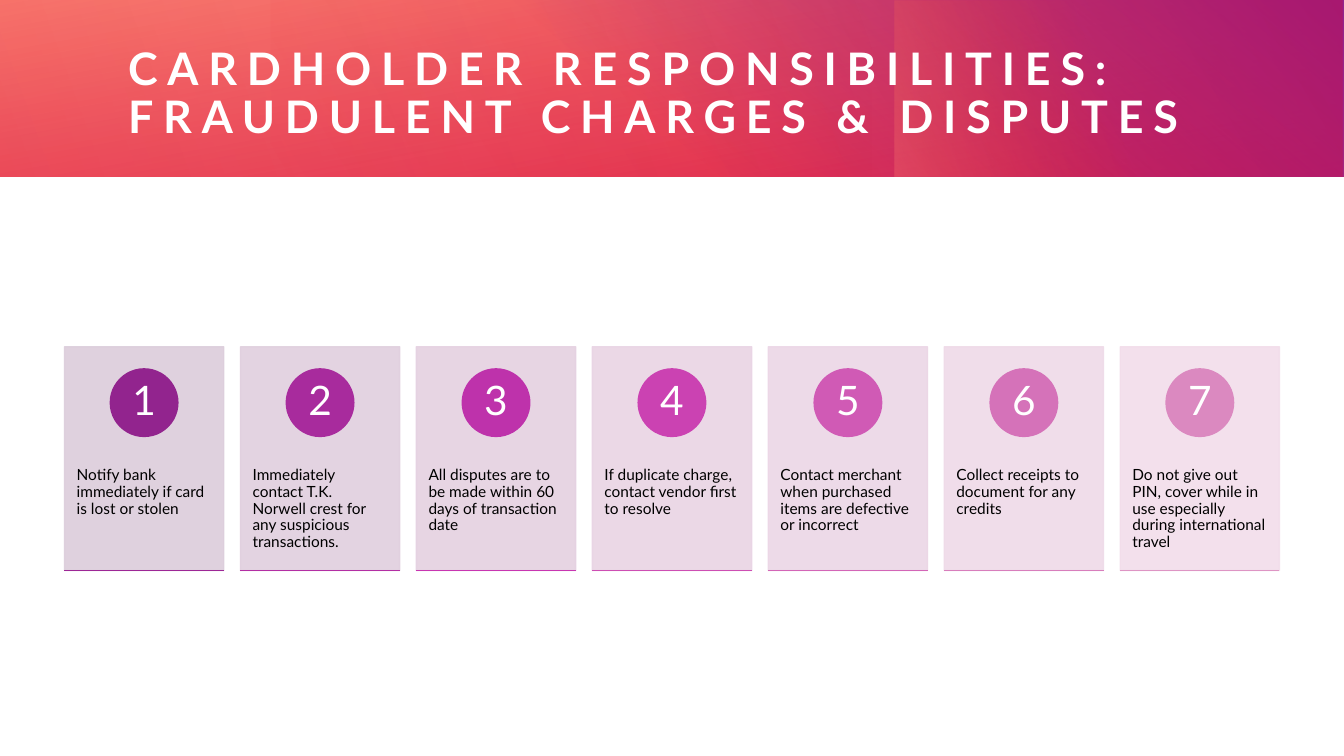
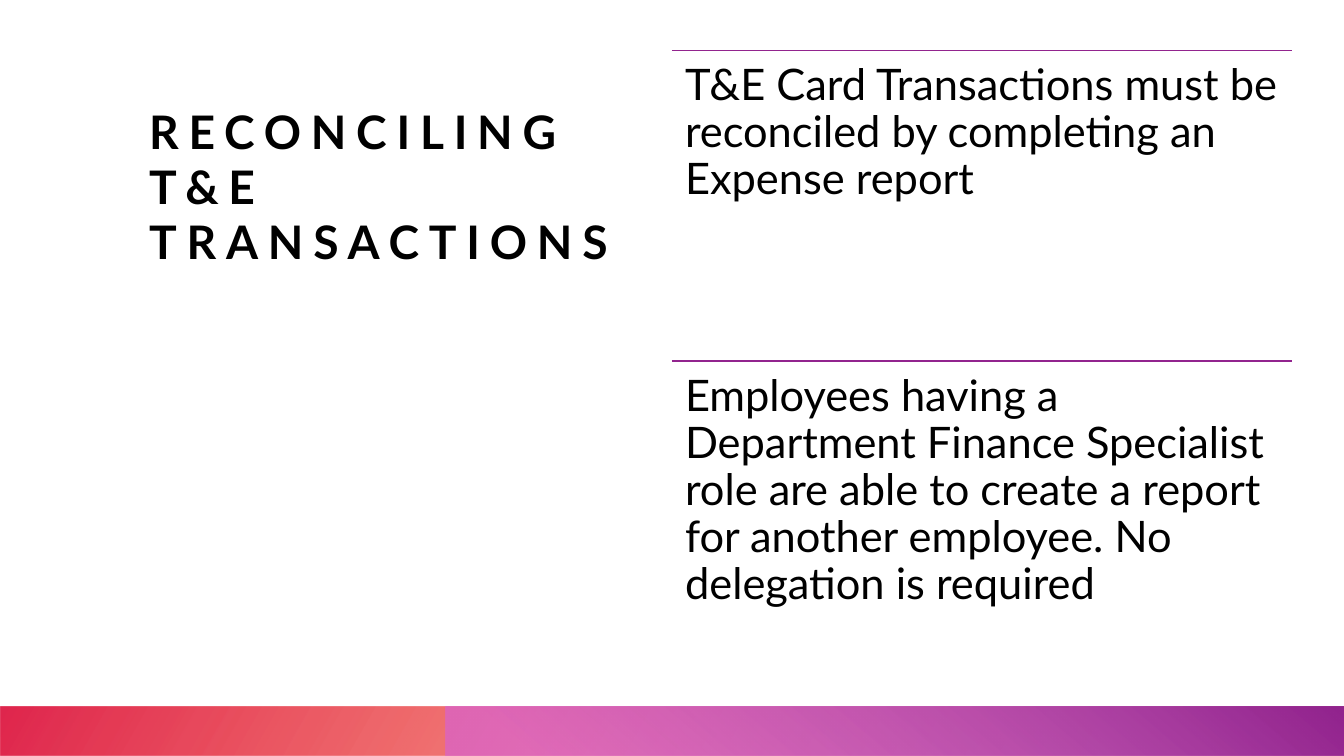
from pptx import Presentation
from pptx.dml.color import RGBColor
from pptx.enum.shapes import MSO_CONNECTOR, MSO_SHAPE
from pptx.enum.text import MSO_ANCHOR, MSO_AUTO_SIZE, PP_ALIGN
from pptx.oxml import parse_xml
from pptx.oxml.ns import nsdecls, qn
from pptx.util import Inches, Pt

RECTANGLE, OVAL = MSO_SHAPE.RECTANGLE, MSO_SHAPE.OVAL
STRAIGHT = MSO_CONNECTOR.STRAIGHT
TOP, MIDDLE = MSO_ANCHOR.TOP, MSO_ANCHOR.MIDDLE
LEFT, CENTER = PP_ALIGN.LEFT, PP_ALIGN.CENTER

# Shared style
FONT = "Lato"
TITLE_ONLY = 5
SLIDE_WIDTH, SLIDE_HEIGHT = 40 / 3, 7.5
WHITE = RGBColor(0xFF, 0xFF, 0xFF)
BLACK = RGBColor(0x00, 0x00, 0x00)
PURPLE = RGBColor(0x92, 0x24, 0x8E)
ORCHID = RGBColor(0xD8, 0x61, 0xD4)
CRIMSON = RGBColor(0xDA, 0x00, 0x2F)
ORANGE = RGBColor(0xFE, 0x4A, 0x00)
SALMON = RGBColor(0xFF, 0x90, 0x7A)

# Circle and underline shades, taken in turn from card to card
ACCENTS = [RGBColor.from_string(shade) for shade in (
    "92248E 9D2796 A82B9D B32FA4 BE32AB C836B1 CB42B2 "
    "CD4EB3 D05AB5 D366B7 D572B9 D87EBC DB89C0 DE95C4").split()]
TINTS = [RGBColor.from_string(tint) for tint in
         "DCCDDB E0CFDE E5D1E1 E9D4E4 ECD6E6 EFDAE8 F2DDEA".split()]
TINT_OPACITY = 90

# Header band and footer bar
BAND_HEIGHT = 1.75
BAR_TOP = 7.01
BAR_HEIGHT = SLIDE_HEIGHT - BAR_TOP
BAR_SPLIT = SLIDE_WIDTH / 3 - 0.02

# Row of cards
CARD_LEFT, CARD_TOP = 0.64, 3.44
CARD_WIDTH, CARD_HEIGHT = 1.58, 2.22
CIRCLE_SIZE, CIRCLE_DROP, TEXT_DROP = 0.67, 0.22, 0.84
CARDS = [
    "Notify bank immediately if card is lost or stolen",
    "Immediately contact T.K. Norwell crest for any suspicious transactions.",
    "All disputes are to be made within 60 days of transaction date",
    "If duplicate charge, contact vendor first to resolve",
    "Contact merchant when purchased items are defective or incorrect",
    "Collect receipts to document for any credits",
    "Do not give out PIN, cover while in use especially during "
    "international travel",
]

# Ruled statements
ROW_LEFT, ROW_TOP = SLIDE_WIDTH / 2, 0.5
ROW_WIDTH, ROW_HEIGHT = 6.15, 3.08
STATEMENTS = [
    "T&E Card Transactions must be reconciled by completing an Expense report",
    "Employees having a Department Finance Specialist role are able to create "
    "a report for another employee. No delegation is required",
]


def write_text(shape, text, size, color=BLACK, bold=False, align=LEFT,
               anchor=TOP, insets=(0, 0), line_spacing=0.9, tracking=None):
    """Fill a shape with one formatted paragraph; insets are (side, end)."""
    frame = shape.text_frame
    frame.word_wrap = True
    frame.auto_size = MSO_AUTO_SIZE.NONE
    frame.vertical_anchor = anchor
    frame.margin_left = frame.margin_right = Inches(insets[0])
    frame.margin_top = frame.margin_bottom = Inches(insets[1])
    para = frame.paragraphs[0]
    para.alignment = align
    para.line_spacing = line_spacing
    span = para.add_run()
    span.text = text
    span.font.name = FONT
    span.font.size = Pt(size)
    span.font.bold = bold
    span.font.color.rgb = color
    if tracking:
        span.font._element.set("spc", str(tracking * 100))


def add_title(page, text, area, **style):
    title = page.shapes.title
    title.left, title.top, title.width, title.height = map(Inches, area)
    write_text(title, text, color=style.pop("color", BLACK), bold=True,
               tracking=7, **style)


def add_text(page, text, area, **style):
    box = page.shapes.add_textbox(*map(Inches, area))
    write_text(box, text, **style)


def add_solid(page, kind, area, color, opacity=100):
    """Add a shape whose fill and outline share one colour."""
    shape = page.shapes.add_shape(kind, *map(Inches, area))
    shape.shadow.inherit = False
    shape.fill.solid()
    shape.fill.fore_color.rgb = color
    shape.line.color.rgb = color
    shape.line.width = Pt(1)
    if opacity < 100:
        for node in shape._element.spPr.iter(qn("a:srgbClr")):
            node.append(parse_xml(
                f'<a:alpha {nsdecls("a")} val="{opacity * 1000}"/>'))
    return shape


def add_gradient(page, area, angle, *stops, rotation=0, flip=False):
    """Add a rectangle with (position, colour, opacity) gradient stops."""
    shape = page.shapes.add_shape(RECTANGLE, *map(Inches, area))
    shape.shadow.inherit = False
    shape.line.fill.background()
    shape.rotation = rotation
    properties = shape._element.spPr
    if flip:
        properties.get_or_add_xfrm().set("flipH", "1")
    stop_list = "".join(
        f'<a:gs pos="{position * 1000}"><a:srgbClr val="{color}">'
        f'<a:alpha val="{opacity * 1000}"/></a:srgbClr></a:gs>'
        for position, color, opacity in stops)
    properties.find(qn("a:prstGeom")).addnext(parse_xml(
        f'<a:gradFill {nsdecls("a")}><a:gsLst>{stop_list}</a:gsLst>'
        f'<a:lin ang="{angle * 60000}" scaled="0"/></a:gradFill>'))


def add_rule(page, left, top, width, color):
    rule = page.shapes.add_connector(
        STRAIGHT, *map(Inches, (left, top, left + width, top)))
    rule.line.color.rgb = color
    rule.line.width = Pt(1)
    rule._element.spPr.append(parse_xml(f'<a:effectLst {nsdecls("a")}/>'))


def add_header_band(page):
    add_gradient(page, (0, 0, SLIDE_WIDTH, BAND_HEIGHT), 260,
                 (0, CRIMSON, 83), (100, SALMON, 100))
    add_gradient(page, (4.81, 0, SLIDE_WIDTH - 4.81, BAND_HEIGHT), 310,
                 (22, PURPLE, 0), (99, PURPLE, 100))
    # Turned on its side, this patch spans the band's height
    add_gradient(page, (9.87, -0.99, BAND_HEIGHT, 3.74), 250,
                 (45, ORANGE, 0), (99, SALMON, 33), rotation=270)
    add_gradient(page, (2.68, 0, 10.64, BAND_HEIGHT), 330,
                 (0, CRIMSON, 30), (99, CRIMSON, 0), rotation=180)
    add_gradient(page, (0, 0, 8.65, BAND_HEIGHT), 340,
                 (0, CRIMSON, 21), (99, CRIMSON, 0))


def add_footer_bar(page):
    add_gradient(page, (0, BAR_TOP, SLIDE_WIDTH, BAR_HEIGHT), 150,
                 (14, ORANGE, 28), (100, CRIMSON, 85), rotation=180, flip=True)
    add_gradient(page, (BAR_SPLIT, BAR_TOP, SLIDE_WIDTH - BAR_SPLIT, BAR_HEIGHT),
                 230, (9, ORCHID, 68), (99, PURPLE, 100), flip=True)


def add_card(page, index, text):
    pitch = (SLIDE_WIDTH - 2 * CARD_LEFT - CARD_WIDTH) / (len(CARDS) - 1)
    left = CARD_LEFT + index * pitch
    circle_color, rule_color = ACCENTS[2 * index:2 * index + 2]
    add_solid(page, RECTANGLE, (left, CARD_TOP, CARD_WIDTH, CARD_HEIGHT),
              TINTS[index], TINT_OPACITY)
    add_text(page, text, (left, CARD_TOP + TEXT_DROP, CARD_WIDTH, 1.33),
             size=11, insets=(0.12, 0.36))
    circle = add_solid(
        page, OVAL, (left + (CARD_WIDTH - CIRCLE_SIZE) / 2,
                     CARD_TOP + CIRCLE_DROP, CIRCLE_SIZE, CIRCLE_SIZE),
        circle_color)
    write_text(circle, str(index + 1), size=29, color=WHITE, align=CENTER,
               anchor=MIDDLE, insets=(0.05, 0.01))
    add_rule(page, left, CARD_TOP + CARD_HEIGHT, CARD_WIDTH, rule_color)


def add_page(deck):
    return deck.slides.add_slide(deck.slide_layouts[TITLE_ONLY])


def build_responsibilities(deck):
    page = add_page(deck)
    add_header_band(page)
    # Bring the title in front of the band
    page.shapes._spTree.append(page.shapes.title._element)
    add_title(page, "CARDHOLDER RESPONSIBILITIES: FRAUDULENT CHARGES & DISPUTES",
              (1.27, 0.41, 11.35, 1.06), size=32, color=WHITE, anchor=MIDDLE)
    for index, text in enumerate(CARDS):
        add_card(page, index, text)


def build_reconciling(deck):
    page = add_page(deck)
    add_title(page, "RECONCILING T&E TRANSACTIONS", (1.48, 1.02, 5.02, 4.99),
              size=33, line_spacing=1.0)
    add_footer_bar(page)
    for index, text in enumerate(STATEMENTS):
        top = ROW_TOP + index * ROW_HEIGHT
        add_rule(page, ROW_LEFT, top, ROW_WIDTH, PURPLE)
        add_text(page, text, (ROW_LEFT, top, ROW_WIDTH, ROW_HEIGHT),
                 size=31, insets=(0.13, 0.13))


def main():
    deck = Presentation()
    deck.slide_width = Inches(SLIDE_WIDTH)
    deck.slide_height = Inches(SLIDE_HEIGHT)
    build_responsibilities(deck)
    build_reconciling(deck)
    deck.save("out.pptx")


if __name__ == "__main__":
    main()
